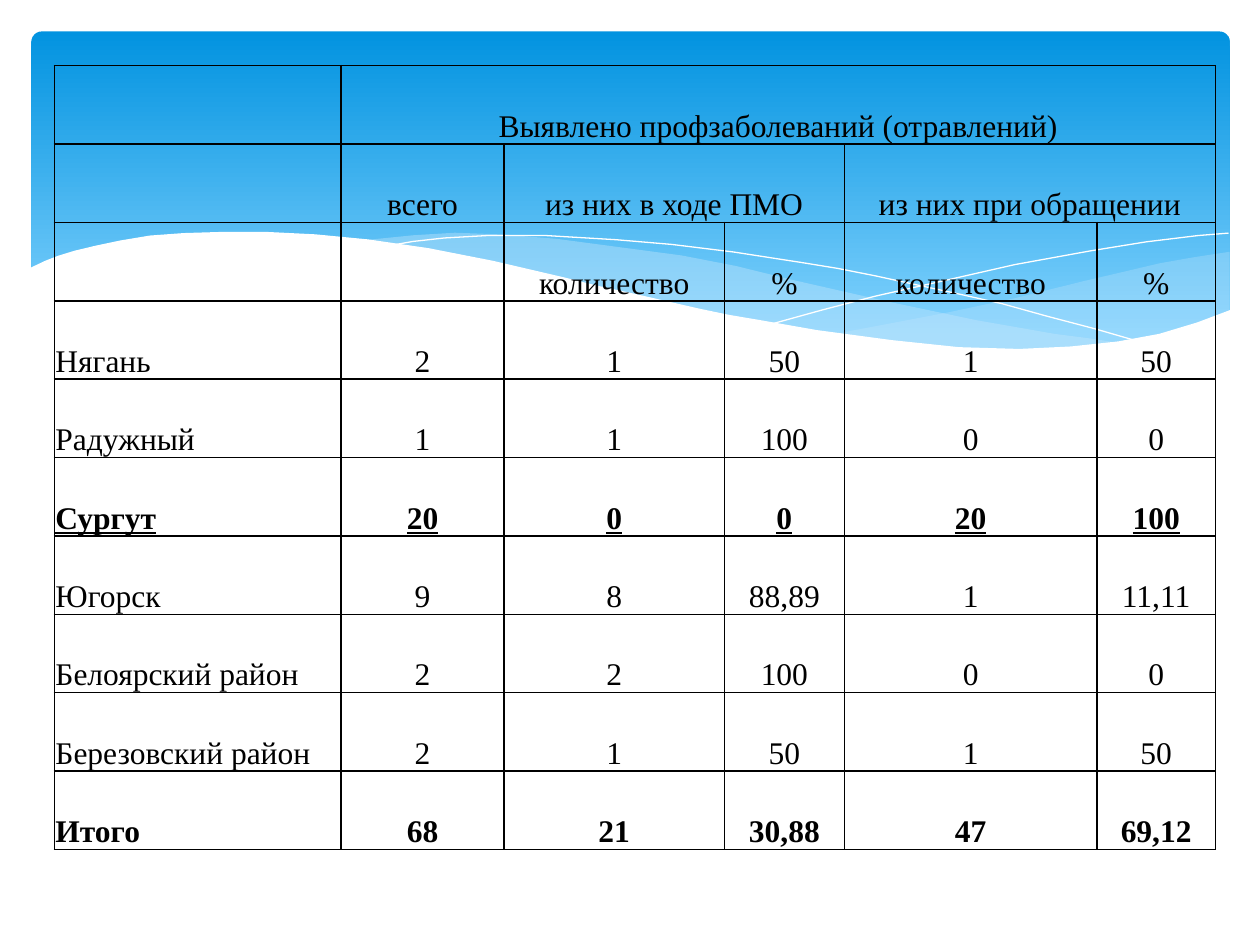
from lxml import etree
from pptx import Presentation
from pptx.dml.color import RGBColor
from pptx.enum.shapes import MSO_SHAPE
from pptx.enum.text import MSO_ANCHOR, PP_ALIGN
from pptx.oxml.ns import qn
from pptx.util import Pt

ROUNDED = MSO_SHAPE.ROUNDED_RECTANGLE
BOTTOM = MSO_ANCHOR.BOTTOM
LEFT, CENTER = PP_ALIGN.LEFT, PP_ALIGN.CENTER

RIGHT_WAVE = [
    (702, 144), (682.5, 147), (662.6, 150.5), (641.5, 155.5), (620, 160.5),
    (579.6, 170.5), (542, 178.5), (508, 185), (476, 191), (497.5, 193.5),
    (517.5, 196), (536.5, 198), (554, 199.5), (578, 200), (601, 199.5),
    (621, 199), (640, 196.5), (657, 193.5), (673, 189.5), (683, 185),
    (693, 181.5), (702.7, 178), (702.7, 144)]
MIDDLE_WAVE = [
    (643, 196.5), (623.5, 193.5), (602.6, 190.8), (581, 187), (558, 183),
    (508, 172.5), (453, 160), (420.5, 152), (389.5, 146), (352, 141),
    (318, 136.5), (287, 134), (260, 133), (236, 134.5), (206, 137.5),
    (232.5, 141), (260.5, 146), (291, 152), (323, 160), (353.5, 167),
    (381.6, 173), (420.5, 181.5), (456.5, 188), (489.6, 193), (520, 196.5),
    (548, 199), (573, 200), (596, 200), (617, 199.5), (631, 198)]
LONG_CURVE = [
    (222.5, 140.4), (236, 138), (254, 136), (278.6, 134.6), (311.8, 134.6),
    (352, 137), (383.8, 139.7), (419, 144), (457.9, 150), (478.8, 153.4),
    (500.4, 157.7), (523.4, 162.7), (547, 167.8), (572.4, 173.5),
    (598.3, 180.7), (625.7, 187.9), (653, 195.8)]
SHORT_CURVE = [
    (441.4, 185), (470, 177.1), (500.4, 169.2), (538.6, 160.6), (580, 151.2),
    (623.5, 143.3), (655, 138.2), (684.7, 134.6), (702, 133.2)]
WHITE_WAVE = [
    (703.4, 177), (684, 184.3), (662.4, 190.8), (639, 195.1), (612, 198),
    (582.5, 199.4), (548, 198.4), (509.8, 194.4), (466.6, 188.6),
    (434.2, 182.9), (416.9, 180), (399.6, 176.4), (362.2, 167.8),
    (342, 163.4), (321.8, 158.4), (281.5, 149), (244.8, 141.8),
    (210.2, 136.8), (180, 133.9), (151.9, 132.5), (127.4, 132.5),
    (105, 133.2), (85.7, 134.6), (68.4, 137.5), (54.7, 140.4), (42.5, 143.3),
    (33.1, 146.2), (25.9, 149), (16.6, 153.4), (16.6, 236.9), (703.4, 236.9)]

COLUMN_WIDTHS = [164, 93, 126, 68.5, 144.5, 67.5]
ROW_HEIGHT = 44.8
ROWS = [
    ["", "Выявлено профзаболеваний (отравлений)", "", "", "", ""],
    ["", "всего", "из них в ходе ПМО", "", "из них при обращении", ""],
    ["", "", "количество", "%", "количество", "%"],
    ["Нягань", "2", "1", "50", "1", "50"],
    ["Радужный", "1", "1", "100", "0", "0"],
    ["Сургут", "20", "0", "0", "20", "100"],
    ["Югорск", "9", "8", "88,89", "1", "11,11"],
    ["Белоярский район", "2", "2", "100", "0", "0"],
    ["Березовский район", "2", "1", "50", "1", "50"],
    ["Итого", "68", "21", "30,88", "47", "69,12"],
]
HEADER_SPANS = [(0, 1, 5), (1, 2, 3), (1, 4, 5)]  # row, first and last column
BOLD_ROWS = {"Сургут", "Итого"}
UNDERLINED_ROWS = {"Сургут"}


def color(hex_text):
    return RGBColor.from_string(hex_text)


class SlideBuilder:
    font_name = "Times New Roman"
    font_size = 18
    ink = "000000"

    def __init__(self, slide):
        self.slide = slide

    def gradient_panel(self, left, top, width, height, stops):
        panel = self.slide.shapes.add_shape(
            ROUNDED, Pt(left), Pt(top), Pt(width), Pt(height))
        panel.adjustments[0] = 0.03
        panel.shadow.inherit = False
        panel.line.fill.background()
        panel.fill.gradient()
        panel.fill.gradient_angle = 270
        for stop, (position, shade) in zip(panel.fill.gradient_stops, stops):
            stop.position = position
            stop.color.rgb = color(shade)

    def outline(self, points, closed):
        start, *rest = [(Pt(x), Pt(y)) for x, y in points]
        builder = self.slide.shapes.build_freeform(*start)
        builder.add_line_segments(rest, close=closed)
        shape = builder.convert_to_shape()
        shape.shadow.inherit = False
        return shape

    def wave(self, points, shade, opacity=100):
        wave = self.outline(points, closed=True)
        wave.line.fill.background()
        wave.fill.solid()
        wave.fill.fore_color.rgb = color(shade)
        if opacity < 100:
            rgb = wave.fill._xPr.find(".//" + qn("a:srgbClr"))
            etree.SubElement(rgb, qn("a:alpha"), val=str(opacity * 1000))

    def curve(self, points, shade):
        curve = self.outline(points, closed=False)
        curve.fill.background()
        curve.line.color.rgb = color(shade)
        curve.line.width = Pt(0)

    def table(self, left, top, widths, row_height, rows, spans):
        table = self.slide.shapes.add_table(
            len(rows), len(widths), Pt(left), Pt(top),
            Pt(sum(widths)), Pt(row_height * len(rows))).table
        table.first_row = table.horz_banding = False
        for column, width in zip(table.columns, widths):
            column.width = Pt(width)
        for r, row in enumerate(rows):
            table.rows[r].height = Pt(row_height)
            for c, text in enumerate(row):
                self.cell(table.cell(r, c), text, CENTER if c else LEFT,
                          row[0] in BOLD_ROWS, row[0] in UNDERLINED_ROWS)
        for r, first, last in spans:
            table.cell(r, first).merge(table.cell(r, last))

    def cell(self, cell, text, align, bold, underline):
        cell.text = text
        cell.vertical_anchor = BOTTOM
        cell.margin_left = cell.margin_right = cell.margin_top = Pt(0.7)
        cell.margin_bottom = Pt(0)
        self.borders(cell)
        cell.fill.background()
        paragraph = cell.text_frame.paragraphs[0]
        paragraph.alignment = align
        paragraph.line_spacing = 1.15
        font = paragraph.font
        font.name, font.size = self.font_name, Pt(self.font_size)
        font.bold, font.underline = bold, underline
        font.color.rgb = color(self.ink)

    def borders(self, cell):
        properties = cell._tc.get_or_add_tcPr()
        for side in ("lnL", "lnR", "lnT", "lnB"):
            line = etree.SubElement(properties, qn("a:" + side), w=str(Pt(1)))
            fill = etree.SubElement(line, qn("a:solidFill"))
            etree.SubElement(fill, qn("a:srgbClr"), val=self.ink)


def main():
    deck = Presentation()
    deck.slide_width, deck.slide_height = Pt(720), Pt(540)
    builder = SlideBuilder(deck.slides.add_slide(deck.slide_layouts[6]))
    builder.gradient_panel(18, 18, 684.7, 194.4,
                           [(0, "0293E0"), (0.9, "83D3FE")])
    builder.wave(RIGHT_WAVE, "C6E7FC", 29)
    builder.wave(MIDDLE_WAVE, "C6E7FC", 40)
    builder.curve(LONG_CURVE, "FFFFFF")
    builder.curve(SHORT_CURVE, "FFFFFF")
    builder.wave(WHITE_WAVE, "FFFFFF")
    builder.table(31, 37.5, COLUMN_WIDTHS, ROW_HEIGHT, ROWS, HEADER_SPANS)
    deck.save("out.pptx")


if __name__ == "__main__":
    main()
